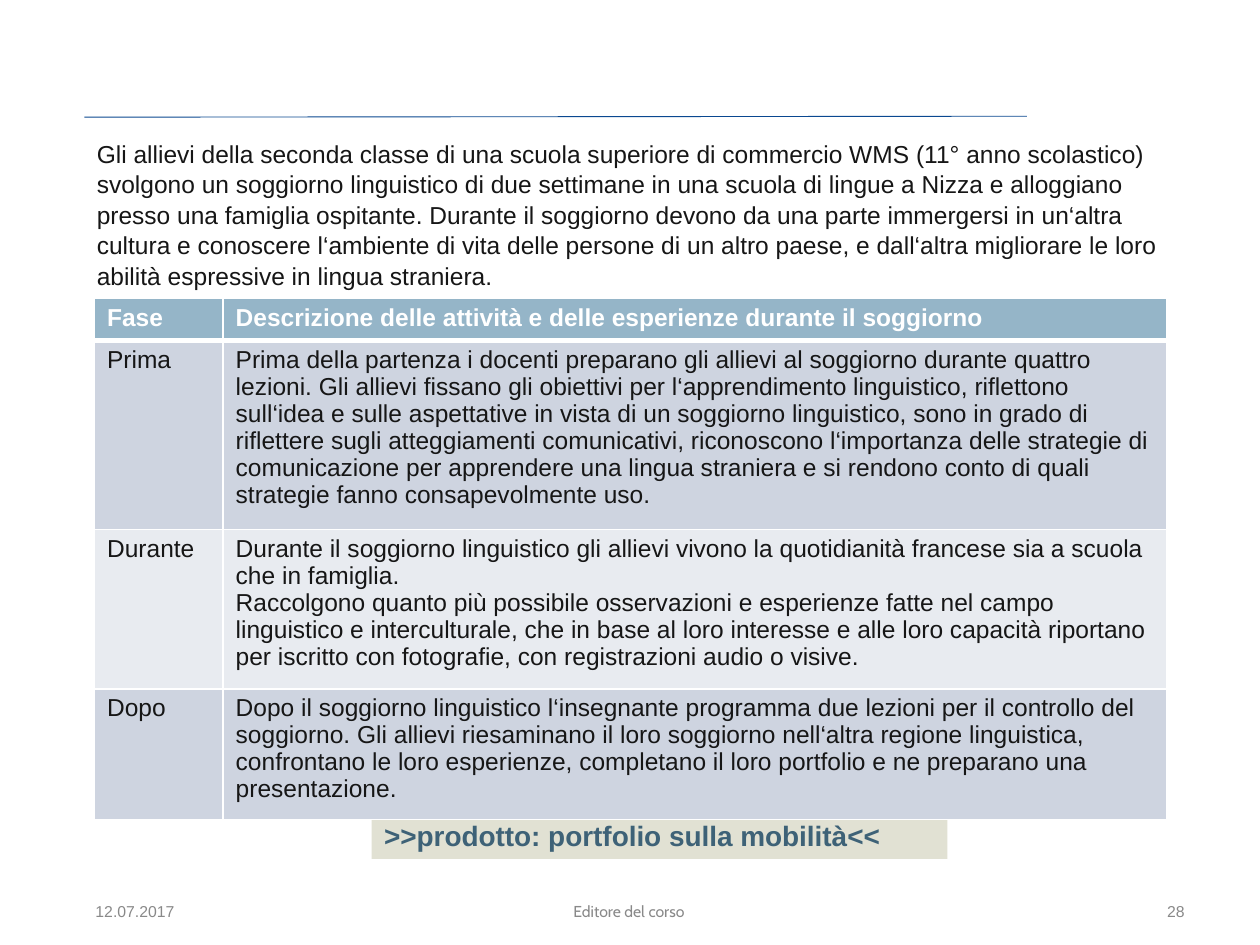
from lxml import etree
from pptx import Presentation
from pptx import util as u
from pptx.dml.color import RGBColor
from pptx.enum import shapes, text
from pptx.oxml import ns

WIDTH, HEIGHT = u.Inches(10), u.Inches(7.5)
WHITE = RGBColor(0xFF, 0xFF, 0xFF)
INK = RGBColor(0x16, 0x16, 0x16)
GREY = RGBColor(0x89, 0x89, 0x89)
NAVY = RGBColor(0x0A, 0x48, 0x90)
TEAL = RGBColor(0x3E, 0x62, 0x77)
SAND = RGBColor(0xE1, 0xE1, 0xD3)
HEADER = RGBColor(0x95, 0xB5, 0xC8)
BANDS = RGBColor(0xCE, 0xD4, 0xE0), RGBColor(0xE8, 0xEB, 0xF0)

INTRO = (
    "Gli allievi della seconda classe di una scuola superiore di commercio WMS (11° anno scolastico) "
    "svolgono un soggiorno linguistico di due settimane in una scuola di lingue a Nizza e alloggiano "
    "presso una famiglia ospitante. Durante il soggiorno devono da una parte immergersi in un‘altra "
    "cultura e conoscere l‘ambiente di vita delle persone di un altro paese, e dall‘altra migliorare "
    "le loro abilità espressive in lingua straniera."
)
PHASES = [
    ("Fase", ["Descrizione delle attività e delle esperienze durante il soggiorno"]),
    ("Prima", [
        "Prima della partenza i docenti preparano gli allievi al soggiorno durante quattro lezioni. "
        "Gli allievi fissano gli obiettivi per l‘apprendimento linguistico, riflettono sull‘idea e "
        "sulle aspettative in vista di un soggiorno linguistico, sono in grado di riflettere sugli "
        "atteggiamenti comunicativi, riconoscono l‘importanza delle strategie di comunicazione per "
        "apprendere una lingua straniera e si rendono conto di quali strategie fanno consapevolmente uso."]),
    ("Durante", [
        "Durante il soggiorno linguistico gli allievi vivono la quotidianità francese sia a scuola "
        "che in famiglia.",
        "Raccolgono quanto più possibile osservazioni e esperienze fatte nel campo linguistico e "
        "interculturale, che in base al loro interesse e alle loro capacità riportano per iscritto "
        "con fotografie, con registrazioni audio o visive."]),
    ("Dopo", [
        "Dopo il soggiorno linguistico l‘insegnante programma due lezioni per il controllo del "
        "soggiorno. Gli allievi riesaminano il loro soggiorno nell‘altra regione linguistica, "
        "confrontano le loro esperienze, completano il loro portfolio e ne preparano una presentazione."]),
]
COLUMN_SHARES = 0.12, 0.88
ROW_SHARES = 0.08, 0.363, 0.307, 0.25


def area(left, top, width, height):
    return tuple(u.Emu(int(size * share)) for size, share in
                 zip((WIDTH, HEIGHT) * 2, (left, top, width, height)))


def write(frame, paragraphs, size, color, bold=False, font="Arial",
          align=text.PP_ALIGN.LEFT, spacing=None):
    frame.word_wrap = True
    for index, words in enumerate(paragraphs):
        para = frame.add_paragraph() if index else frame.paragraphs[0]
        para.alignment = align
        para.line_spacing = spacing
        span = para.add_run()
        span.text = words
        span.font.name, span.font.size, span.font.bold = font, u.Pt(size), bold
        span.font.color.rgb = color


def add_rule(page, box):
    left, top, width, height = box
    rule = page.shapes.add_connector(
        shapes.MSO_CONNECTOR.STRAIGHT, left + width, top, left, top + height)
    rule.line.color.rgb, rule.line.width = NAVY, u.Pt(0.5)
    etree.SubElement(rule.element.spPr, ns.qn("a:effectLst"))


def add_intro(page, box):
    frame = page.shapes.add_textbox(*box).text_frame
    frame.margin_left = frame.margin_right = u.Inches(0.1)
    frame.margin_top = frame.margin_bottom = u.Inches(0.1)
    write(frame, [INTRO], 14, INK, spacing=1.04)


def add_banner(page, box):
    banner = page.shapes.add_shape(shapes.MSO_SHAPE.RECTANGLE, *box)
    banner.shadow.inherit = False
    banner.fill.solid()
    banner.fill.fore_color.rgb = SAND
    banner.line.fill.background()
    banner.text_frame.vertical_anchor = text.MSO_ANCHOR.TOP
    write(banner.text_frame, [">>prodotto: portfolio sulla mobilità<<"], 16, TEAL, bold=True)


def set_borders(cell, bottom):
    properties = cell._tc.get_or_add_tcPr()
    widths = {"lnL": 1, "lnR": 1, "lnT": 1, "lnB": bottom}
    for index, (side, width) in enumerate(widths.items()):
        line = etree.Element(ns.qn(f"a:{side}"), w=str(u.Pt(width)))
        fill = etree.SubElement(line, ns.qn("a:solidFill"))
        etree.SubElement(fill, ns.qn("a:srgbClr"), val=str(WHITE))
        properties.insert(index, line)


def add_phases(page, box):
    table = page.shapes.add_table(len(PHASES), 2, *box).table
    for column, share in zip(table.columns, COLUMN_SHARES):
        column.width = u.Emu(int(box[2] * share))
    for index, (phase, share) in enumerate(zip(PHASES, ROW_SHARES)):
        table.rows[index].height = u.Emu(int(box[3] * share))
        heading = index == 0
        for cell, paragraphs in zip(table.rows[index].cells, ([phase[0]], phase[1])):
            cell.fill.solid()
            cell.fill.fore_color.rgb = HEADER if heading else BANDS[(index - 1) % 2]
            set_borders(cell, 3 if heading else 1)
            write(cell.text_frame, paragraphs, 14, WHITE if heading else INK,
                  bold=heading, spacing=0.98)


def add_footer(page, box):
    left, top, width, height = box
    entries = [
        ("12.07.2017", 0, 0.26, "Arial", text.PP_ALIGN.LEFT),
        ("Editore del corso", 0.31, 0.36, "Cabin", text.PP_ALIGN.CENTER),
        ("28", 0.74, 0.26, "Arial", text.PP_ALIGN.RIGHT),
    ]
    for words, start, share, font, align in entries:
        frame = page.shapes.add_textbox(
            left + int(width * start), top, int(width * share), height).text_frame
        frame.vertical_anchor = text.MSO_ANCHOR.MIDDLE
        write(frame, [words], 9, GREY, font=font, align=align)


def main():
    deck = Presentation()
    deck.slide_width, deck.slide_height = WIDTH, HEIGHT
    page = deck.slides.add_slide(deck.slide_layouts[6])
    add_rule(page, area(0.067, 0.123, 0.748, 0.001))
    add_footer(page, area(0.066, 0.938, 0.884, 0.053))
    add_intro(page, area(0.067, 0.132, 0.88, 0.22))
    add_banner(page, area(0.295, 0.86, 0.457, 0.049))
    add_phases(page, area(0.075, 0.316, 0.851, 0.551))
    deck.save("out.pptx")


if __name__ == "__main__":
    main()
